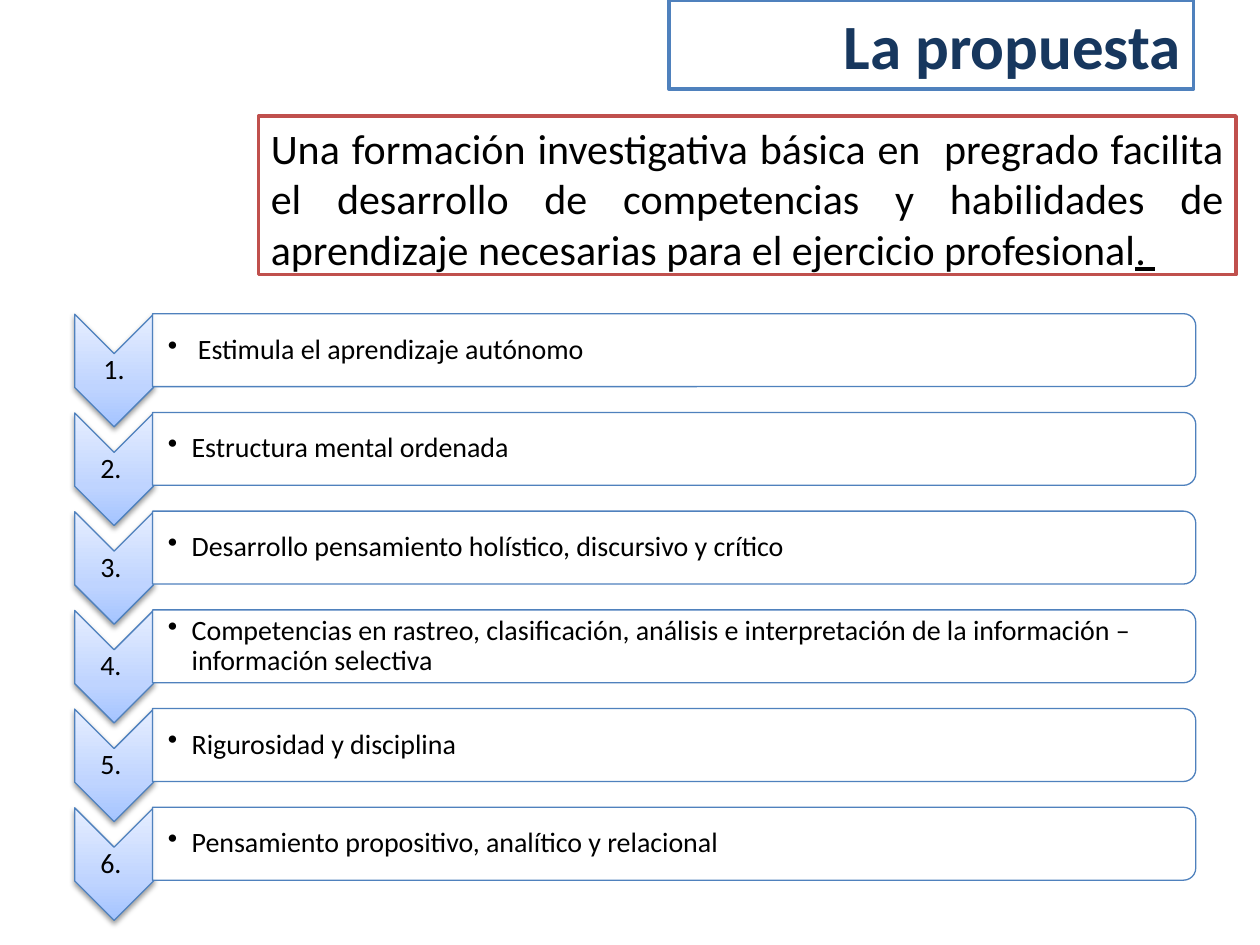
"""Build the slide "La propuesta": a statement and six numbered benefits."""
from lxml.etree import SubElement
from pptx import Presentation
from pptx.dml.color import RGBColor
from pptx.enum.shapes import MSO_SHAPE
from pptx.enum.text import MSO_ANCHOR, MSO_AUTO_SIZE, PP_ALIGN
from pptx.oxml import parse_xml
from pptx.oxml.ns import nsdecls, qn
from pptx.util import Cm, Pt

TITLE = "La propuesta"
STATEMENT = [
    ("Una formación investigativa básica en  pregrado facilita el desarrollo de "
     "competencias y habilidades de aprendizaje necesarias para el ejercicio profesional", False),
    (". ", True),
]
BENEFITS = [
    ("1.", " Estimula el aprendizaje autónomo"),
    ("2. ", "Estructura mental ordenada"),
    ("3. ", "Desarrollo pensamiento holístico, discursivo y crítico"),
    ("4. ", "Competencias en rastreo, clasificación, análisis e interpretación "
            "de la información – información selectiva"),
    ("5. ", "Rigurosidad y disciplina"),
    ("6. ", "Pensamiento propositivo, analítico y relacional"),
]
THEME = {
    "font": "Calibri", "title_size": 36, "statement_size": 24, "item_size": 16,
    "navy": "17375E", "blue": "4F81BD", "red": "C0504D", "black": "000000", "white": "FFFFFF",
    "gradient": [(0, "A4C4FF"), (35, "BFD4FF"), (100, "E6EEFF")],
}
CHEVRON_X, CHEVRON_Y, CHEVRON_LONG, CHEVRON_WIDE = 2.3, 7.47, 2.27, 1.59
BAR_X, BAR_Y, BAR_LONG, BAR_HIGH = 13.59, 7.06, 21.03, 1.47
PITCH = 1.99


def outline(sp, color, width):
    sp.fill.solid()
    sp.fill.fore_color.rgb = RGBColor.from_string(THEME["white"])
    sp.line.color.rgb = RGBColor.from_string(color)
    sp.line.width = Pt(width)


def write(sp, runs, *, size, color=THEME["black"], bold=False, align=PP_ALIGN.LEFT,
          anchor=MSO_ANCHOR.MIDDLE, inset=None, spacing=None, bullet=False):
    tf = sp.text_frame
    tf.word_wrap = True
    tf.auto_size = MSO_AUTO_SIZE.NONE
    tf.vertical_anchor = anchor
    if inset is not None:
        tf.margin_left = Cm(inset)
        tf.margin_top = tf.margin_right = tf.margin_bottom = Cm(0.02)
    p = tf.paragraphs[0]
    p.alignment = align
    if spacing:
        p.line_spacing = spacing
    if bullet:
        pPr = p._p.get_or_add_pPr()
        pPr.set("marL", str(Cm(0.48)))
        pPr.set("indent", str(-Cm(0.48)))
        SubElement(pPr, qn("a:buChar"), char="•")
    for text, underline in runs:
        r = p.add_run()
        r.text = text
        r.font.name = THEME["font"]
        r.font.size = Pt(size)
        r.font.bold = bold
        r.font.underline = underline
        r.font.color.rgb = RGBColor.from_string(color)


def add_rotated(s, kind, x, y, length, width):
    sp = s.shapes.add_shape(kind, Cm(x - length / 2), Cm(y - width / 2), Cm(length), Cm(width))
    sp.rotation = 90
    sp.shadow.inherit = False
    outline(sp, THEME["blue"], 0.75)
    return sp


def shade_chevron(sp):
    stops = "".join(f'<a:gs pos="{pos * 1000}"><a:srgbClr val="{color}"/></a:gs>'
                    for pos, color in THEME["gradient"])
    spPr = sp._element.spPr
    spPr.replace(spPr.find(qn("a:solidFill")), parse_xml(
        f'<a:gradFill {nsdecls("a")} rotWithShape="0"><a:gsLst>{stops}</a:gsLst>'
        '<a:lin ang="16200000" scaled="0"/></a:gradFill>'))
    spPr.find(qn("a:effectLst")).append(parse_xml(
        f'<a:outerShdw {nsdecls("a")} blurRad="{Pt(3.1)}" dist="{Pt(1.6)}" dir="5400000" '
        f'rotWithShape="0"><a:srgbClr val="{THEME["black"]}"><a:alpha val="38000"/>'
        '</a:srgbClr></a:outerShdw>'))


def add_benefit(s, row, number, text):
    dy = row * PITCH
    shade_chevron(add_rotated(s, MSO_SHAPE.CHEVRON, CHEVRON_X, CHEVRON_Y + dy,
                              CHEVRON_LONG, CHEVRON_WIDE))
    label = s.shapes.add_textbox(Cm(CHEVRON_X - CHEVRON_WIDE / 2), Cm(CHEVRON_Y + dy - 0.34),
                                 Cm(CHEVRON_WIDE), Cm(0.68))
    write(label, [(number, False)], size=THEME["item_size"], align=PP_ALIGN.CENTER,
          inset=0.02, spacing=0.9)
    bar = add_rotated(s, MSO_SHAPE.ROUND_2_SAME_RECTANGLE, BAR_X, BAR_Y + dy, BAR_HIGH, BAR_LONG)
    color = bar._element.spPr.find(qn("a:solidFill"))[0]
    SubElement(color, qn("a:alpha"), val="90000")
    box = s.shapes.add_textbox(Cm(BAR_X - BAR_LONG / 2), Cm(BAR_Y + dy - 0.66),
                               Cm(BAR_LONG - 0.07), Cm(1.32))
    write(box, [(text, False)], size=THEME["item_size"], inset=0.31, spacing=0.9, bullet=True)


def main():
    prs = Presentation()
    prs.slide_width, prs.slide_height = Cm(25.4), Cm(19.05)
    s = prs.slides.add_slide(prs.slide_layouts[5])

    title = s.shapes.title
    title.left, title.top, title.width, title.height = Cm(13.49), Cm(0), Cm(10.57), Cm(1.8)
    outline(title, THEME["blue"], 2)
    write(title, [(TITLE, False)], size=THEME["title_size"], color=THEME["navy"],
          bold=True, align=PP_ALIGN.RIGHT)

    statement = s.shapes.add_textbox(Cm(5.21), Cm(2.34), Cm(19.71), Cm(3.2))
    outline(statement, THEME["red"], 2)
    write(statement, STATEMENT, size=THEME["statement_size"], align=PP_ALIGN.JUSTIFY,
          anchor=MSO_ANCHOR.TOP)

    for row, (number, text) in enumerate(BENEFITS):
        add_benefit(s, row, number, text)
    prs.save("out.pptx")


if __name__ == "__main__":
    main()
